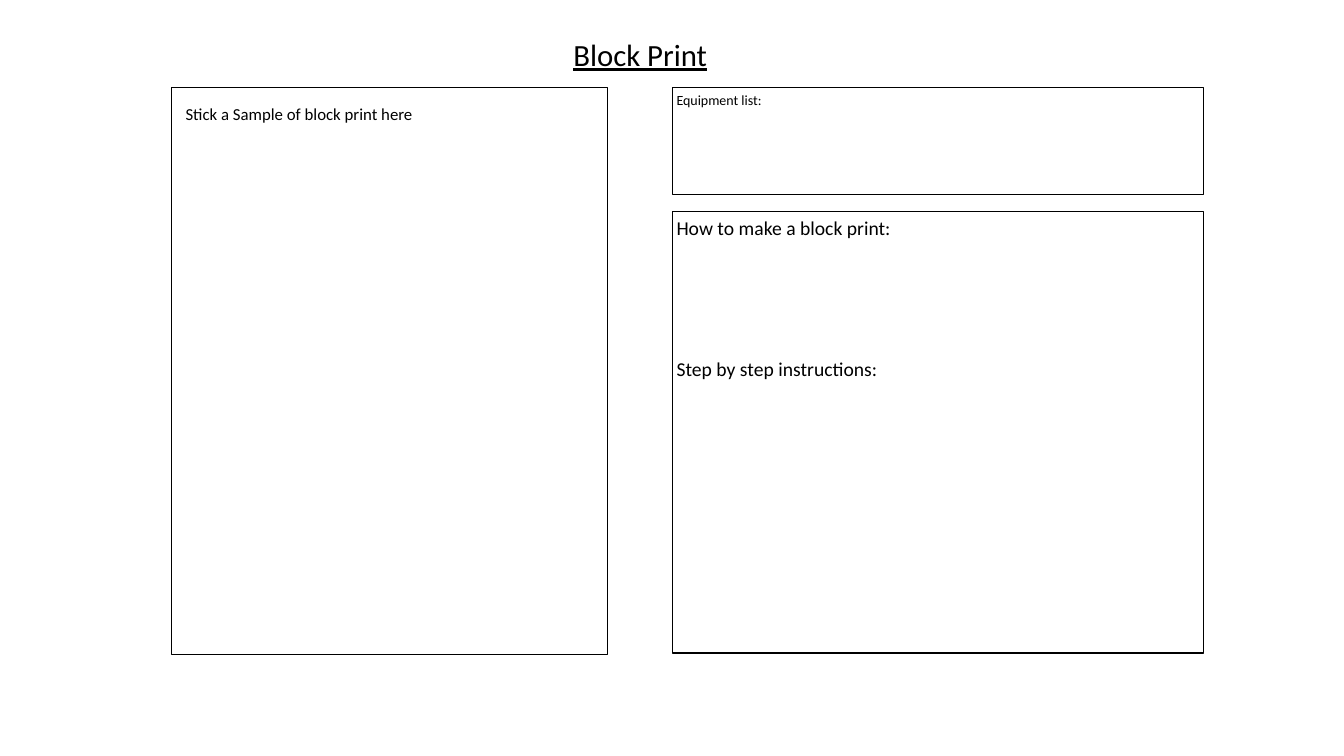
"""Build the block print worksheet slide."""
from dataclasses import dataclass

from pptx import Presentation
from pptx.dml.color import RGBColor
from pptx.enum.shapes import MSO_SHAPE
from pptx.enum.text import MSO_ANCHOR, MSO_AUTO_SIZE, PP_ALIGN
from pptx.slide import Slide
from pptx.text.text import TextFrame
from pptx.util import Inches, Pt

BLACK = RGBColor(0x00, 0x00, 0x00)
FRAME_FORMAT = {
    "margin_left": Inches(0.04),
    "margin_top": Inches(0.04),
    "margin_right": Inches(0.04),
    "margin_bottom": Inches(0.04),
    "word_wrap": True,
    "auto_size": MSO_AUTO_SIZE.NONE,
    "vertical_anchor": MSO_ANCHOR.TOP,
}
TOP = 0.87
RIGHT_LEFT = 6.67
RIGHT_WIDTH = 5.27


@dataclass(frozen=True)
class Area:
    left: float
    top: float
    width: float
    height: float

    def lengths(self) -> tuple:
        return tuple(Inches(value) for value in (self.left, self.top, self.width, self.height))


@dataclass(frozen=True)
class Box:
    area: Area
    line_width: float
    size: int = 12
    headings: tuple[str, ...] = ()
    gap: int = 0


TITLE_AREA = Area(3.53, 0.31, 5.64, 0.92)
SAMPLE_BOX = Box(Area(1.7, TOP, 4.33, 5.62), 0.75)
SAMPLE_LABEL_AREA = Area(1.8, 0.99, 2.99, 0.49)
WRITING_BOXES = (
    Box(Area(RIGHT_LEFT, 2.1, RIGHT_WIDTH, 4.38), 1, 14,
        ("How to make a block print:", "Step by step instructions:"), 84),
    Box(Area(RIGHT_LEFT, TOP, RIGHT_WIDTH, 1.06), 1, 10, ("Equipment list:",)),
)


def write_text(frame: TextFrame, lines: tuple[str, ...], size: int, gap: int = 0,
               alignment: PP_ALIGN = PP_ALIGN.LEFT, underline: bool = False) -> None:
    for name, value in FRAME_FORMAT.items():
        setattr(frame, name, value)
    font_format = {"name": "Calibri", "size": Pt(size), "underline": underline}
    for index, line in enumerate(lines):
        paragraph = frame.add_paragraph() if index else frame.paragraphs[0]
        paragraph.alignment = alignment
        paragraph.space_before = Pt(gap if index else 0)
        run = paragraph.add_run()
        run.text = line
        for name, value in font_format.items():
            setattr(run.font, name, value)
        run.font.color.rgb = BLACK


def add_title(slide: Slide) -> None:
    title = slide.shapes.title
    title.left, title.top, title.width, title.height = TITLE_AREA.lengths()
    write_text(title.text_frame, ("Block Print",), 22, alignment=PP_ALIGN.CENTER, underline=True)


def add_box(slide: Slide, box: Box) -> None:
    shape = slide.shapes.add_shape(MSO_SHAPE.RECTANGLE, *box.area.lengths())
    shape.shadow.inherit = False
    shape.fill.background()
    shape.line.color.rgb = BLACK
    shape.line.width = Pt(box.line_width)
    write_text(shape.text_frame, box.headings, box.size, box.gap)


def add_sample_label(slide: Slide) -> None:
    label = slide.shapes.add_textbox(*SAMPLE_LABEL_AREA.lengths())
    write_text(label.text_frame, ("Stick a Sample of block print here",), 12)


def main() -> None:
    presentation = Presentation()
    presentation.slide_width = Inches(13.33)
    presentation.slide_height = Inches(7.5)
    slide = presentation.slides.add_slide(presentation.slide_layouts.get_by_name("Title Only"))
    add_title(slide)
    add_box(slide, SAMPLE_BOX)
    add_sample_label(slide)
    for box in WRITING_BOXES:
        add_box(slide, box)
    presentation.save("out.pptx")


if __name__ == "__main__":
    main()
